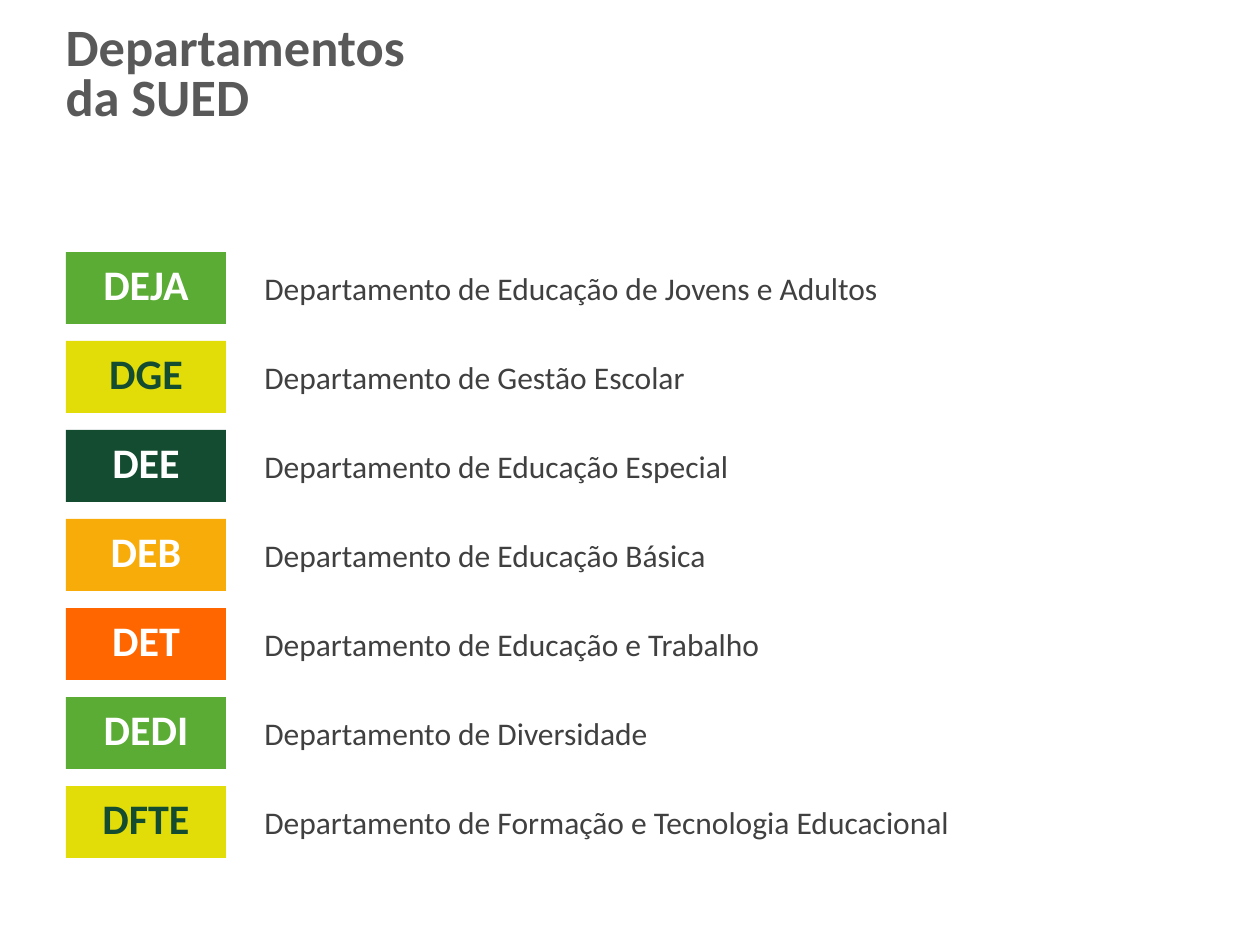
from pptx import Presentation
from pptx.dml.color import RGBColor
from pptx.enum.shapes import MSO_SHAPE
from pptx.enum.text import MSO_ANCHOR, MSO_AUTO_SIZE, PP_ALIGN
from pptx.util import Emu, Pt

COLORS = {
    "green": "5BAC35", "lime": "E2DD09", "forest": "134C30",
    "amber": "F8AC09", "orange": "FF6600", "white": "FFFFFF",
    "title": "595959", "body": "404040",
}
DEPARTMENTS = [
    ("DEJA", "Departamento de Educação de Jovens e Adultos", "green", "white"),
    ("DGE", "Departamento de Gestão Escolar", "lime", "forest"),
    ("DEE", "Departamento de Educação Especial", "forest", "white"),
    ("DEB", "Departamento de Educação Básica", "amber", "white"),
    ("DET", "Departamento de Educação e Trabalho", "orange", "white"),
    ("DEDI", "Departamento de Diversidade", "green", "white"),
    ("DFTE", "Departamento de Formação e Tecnologia Educacional", "lime", "forest"),
]
FIRST_TOP, ROW_STEP = 252, 89


def px(*lengths):
    return [Emu(round(length * 914400 / 126)) for length in lengths]


def write(shape, text, size, color, bold=False, align=PP_ALIGN.LEFT,
          anchor=MSO_ANCHOR.TOP, line_spacing=None):
    frame = shape.text_frame
    frame.word_wrap = True
    frame.auto_size = MSO_AUTO_SIZE.NONE
    frame.vertical_anchor = anchor
    para = frame.paragraphs[0]
    para.text = text
    para.alignment = align
    para.line_spacing = line_spacing
    for span in para.runs:
        span.font.name = "Calibri"
        span.font.size = Pt(size)
        span.font.bold = bold
        span.font.color.rgb = RGBColor.from_string(COLORS[color])


deck = Presentation()
deck.slide_width, deck.slide_height = px(1260, 945)
page = deck.slides.add_slide(deck.slide_layouts[5])

# Title, with a line break between its two lines
title = page.shapes.title
title.left, title.top, title.width, title.height = px(53, 14, 389, 125)
write(title, "Departamentos\vda SUED", 30, "title", bold=True,
      anchor=MSO_ANCHOR.MIDDLE, line_spacing=0.8)

# One row per department: coloured tag and full name
for row, (code, name, fill, ink) in enumerate(DEPARTMENTS):
    top = FIRST_TOP + row * ROW_STEP

    tag = page.shapes.add_shape(MSO_SHAPE.RECTANGLE, *px(66, top, 160, 72))
    tag.shadow.inherit = False
    tag.fill.solid()
    tag.fill.fore_color.rgb = RGBColor.from_string(COLORS[fill])
    tag.line.fill.background()
    write(tag, code, 24, ink, bold=True, align=PP_ALIGN.CENTER)

    label = page.shapes.add_textbox(*px(252, top + 11, 872, 50))
    write(label, name, 18, "body")

deck.save("out.pptx")
